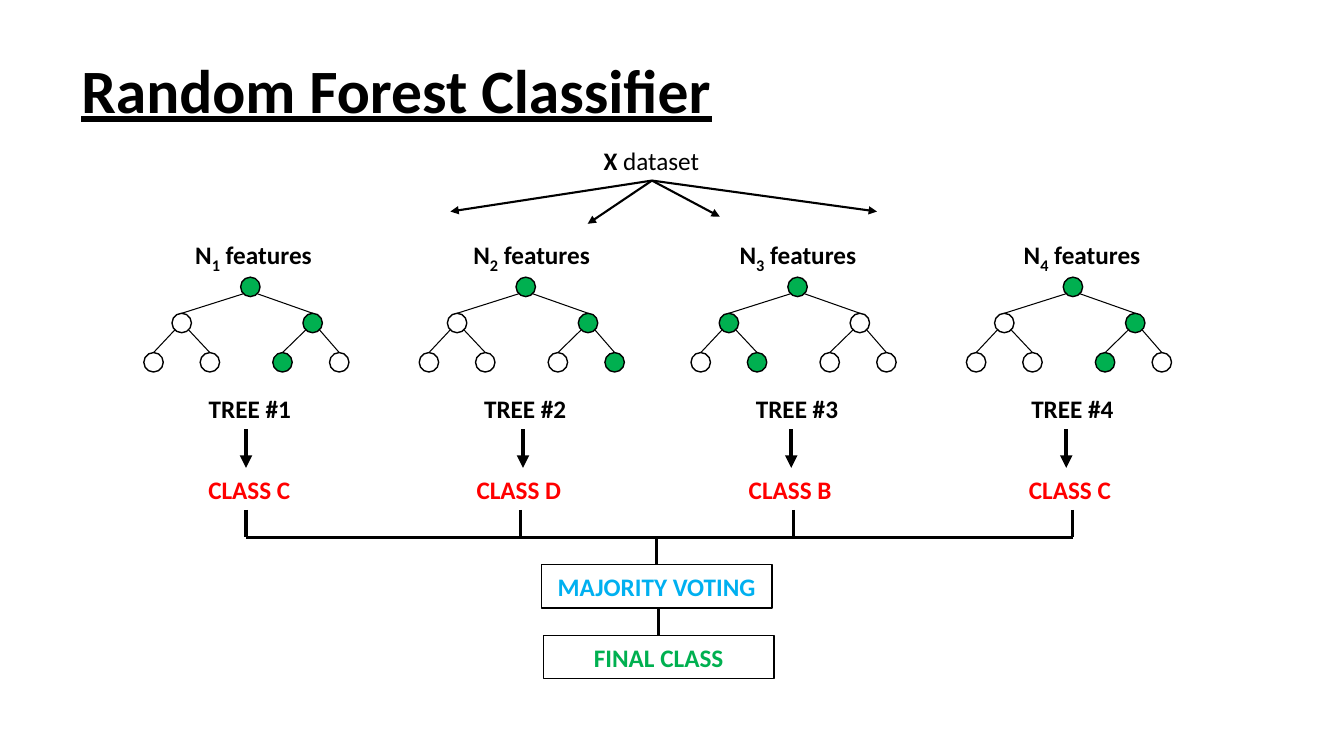
import pptx
import pptx.dml.color
import pptx.enum.shapes
import pptx.enum.text
import pptx.oxml.ns
import pptx.util
from lxml import etree

Cm = pptx.util.Cm
Pt = pptx.util.Pt
Kind = pptx.enum.shapes.MSO_SHAPE
Anchor = pptx.enum.text.MSO_ANCHOR
qn = pptx.oxml.ns.qn

HUES = {"ink": "000000", "paper": "FFFFFF", "green": "00B050",
        "red": "FF0000", "blue": "00B0F0"}

NODES = [(0, 0), (-1.73, 0.91), (1.57, 0.91),
         (-2.44, 1.9), (-1.02, 1.9), (0.81, 1.9), (2.24, 1.9)]
SIZE = 0.49

TREES = [
    dict(left=6.31, path=(0, 2, 5), vote="C", feat=-1.64, arrow=-0.11, label=-1.31, stub=-0.11),
    dict(left=13.25, path=(0, 2, 6), vote="D", feat=-1.57, arrow=-0.07, label=-1.49, stub=-0.14),
    dict(left=20.1, path=(0, 1, 4), vote="B", feat=-1.71, arrow=-0.16, label=-1.48, stub=-0.11),
    dict(left=27.04, path=(0, 2, 5), vote="C", feat=-1.49, arrow=-0.17, label=-1.36, stub=-0.01),
]


def hue(name):
    """Return the colour of the given name."""
    return pptx.dml.color.RGBColor.from_string(HUES[name])


def style(para, size=18, color="ink", bold=True):
    """Set the font of a paragraph."""
    font = para.font
    font.name, font.size, font.bold = "Calibri", Pt(size), bold
    font.color.rgb = hue(color)


def text(slide, left, top, width, parts, color="ink", height=1.02):
    """Add a one-line text box and return its paragraph."""
    box = slide.shapes.add_textbox(Cm(left), Cm(top), Cm(width), Cm(height))
    box.text_frame.word_wrap = False
    para = box.text_frame.paragraphs[0]
    for part in parts:
        para.add_run().text = part
    style(para, color=color)
    return para


def line(slide, start, end, width, arrow=False):
    """Draw a straight black line, with an arrowhead if asked."""
    link = slide.shapes.add_connector(
        pptx.enum.shapes.MSO_CONNECTOR.STRAIGHT, *map(Cm, start + end))
    link.line.color.rgb = hue("ink")
    link.line.width = Pt(width)
    props = link._element.spPr
    if arrow:
        etree.SubElement(props.find(qn("a:ln")), qn("a:tailEnd"), type="triangle")
    etree.SubElement(props, qn("a:effectLst"))


def shape(slide, kind, left, top, width, height, fill="paper"):
    """Add a filled shape with a thin black outline."""
    form = slide.shapes.add_shape(kind, *map(Cm, (left, top, width, height)))
    form.shadow.inherit = False
    form.fill.solid()
    form.fill.fore_color.rgb = hue(fill)
    form.line.color.rgb = hue("ink")
    form.line.width = Pt(1)
    return form


def title(slide, left, top, width, height):
    """Add the underlined slide title."""
    box = slide.shapes.add_textbox(*map(Cm, (left, top, width, height)))
    frame = box.text_frame
    frame.word_wrap = True
    frame.vertical_anchor = Anchor.MIDDLE
    para = frame.paragraphs[0]
    para.text = "Random Forest Classifier"
    para.line_spacing = 0.9
    style(para, 44)
    para.font.underline = True


def source(slide, left, top):
    """Add the dataset label and the arrows that fan out from it."""
    para = text(slide, left, top, 2.92, ["X", " dataset"])
    para.font.bold = False
    para.runs[0].font.bold = True
    start = (left + 1.47, top + 1.02)
    for across, down in [(-5.08, 0.78), (-1.62, 1.09), (1.71, 0.91), (5.67, 0.78)]:
        line(slide, start, (start[0] + across, start[1] + down), 1.5, True)


def tree(slide, left, top, path):
    """Draw a binary tree around its root, with the path in green."""
    edge = SIZE * 0.35
    for spot, (across, down) in enumerate(NODES):
        shape(slide, Kind.OVAL, left + across - SIZE / 2, top + down - SIZE / 2,
              SIZE, SIZE, "green" if spot in path else "paper")
        if spot:
            up = NODES[(spot - 1) // 2]
            side = -edge if spot % 2 else edge
            line(slide, (left + up[0] + side, top + up[1] + edge),
                 (left + across, top + down - SIZE / 2), 0.75)


def column(slide, top, rank, data):
    """Place one tree with its features, name, arrow and class."""
    left = data["left"]
    para = text(slide, left + data["feat"], top, 4, ["N", str(rank), " features"])
    digit = para.runs[1]
    digit.font.size = Pt(20)
    digit._r.get_or_add_rPr().set("baseline", "-25000")
    tree(slide, left, top + 1.39, data["path"])
    text(slide, left - 1.3, top + 3.94, 2.59, [f"TREE #{rank}"])
    mid = left + data["arrow"]
    line(slide, (mid, top + 4.98), (mid, top + 5.95), 3, True)
    text(slide, left + data["label"], top + 6, 2.64, [f"CLASS {data['vote']}"], "red")
    mid = left + data["stub"]
    line(slide, (mid, top + 7.01), (mid, top + 7.7), 2.25)


def verdict(slide, left, top, width):
    """Join the classes and lead them to the vote and the final class."""
    line(slide, (left, top), (left + width, top), 2.25)
    steps = [("MAJORITY VOTING", "blue", 10.34, 0), ("FINAL CLASS", "green", 10.39, 1.78)]
    for words, color, across, down in steps:
        mid = left + across
        high = top + down
        line(slide, (mid, high), (mid, high + 0.69), 2.25)
        box = shape(slide, Kind.RECTANGLE, mid - 2.9, high + 0.69, 5.82, 1.09)
        box.text_frame.vertical_anchor = Anchor.MIDDLE
        para = box.text_frame.paragraphs[0]
        para.text = words
        para.alignment = pptx.enum.text.PP_ALIGN.CENTER
        style(para, color=color)


def main():
    """Build the slide and save it."""
    deck = pptx.Presentation()
    deck.slide_width, deck.slide_height = Cm(33.87), Cm(19.05)
    slide = deck.slides.add_slide(deck.slide_layouts[6])
    title(slide, 1.8, 0.51, 29.21, 3.68)
    source(slide, 14.96, 3.53)
    for rank, data in enumerate(TREES, 1):
        column(slide, 5.84, rank, data)
    verdict(slide, 6.2, 13.54, 20.83)
    deck.save("out.pptx")


if __name__ == "__main__":
    main()
